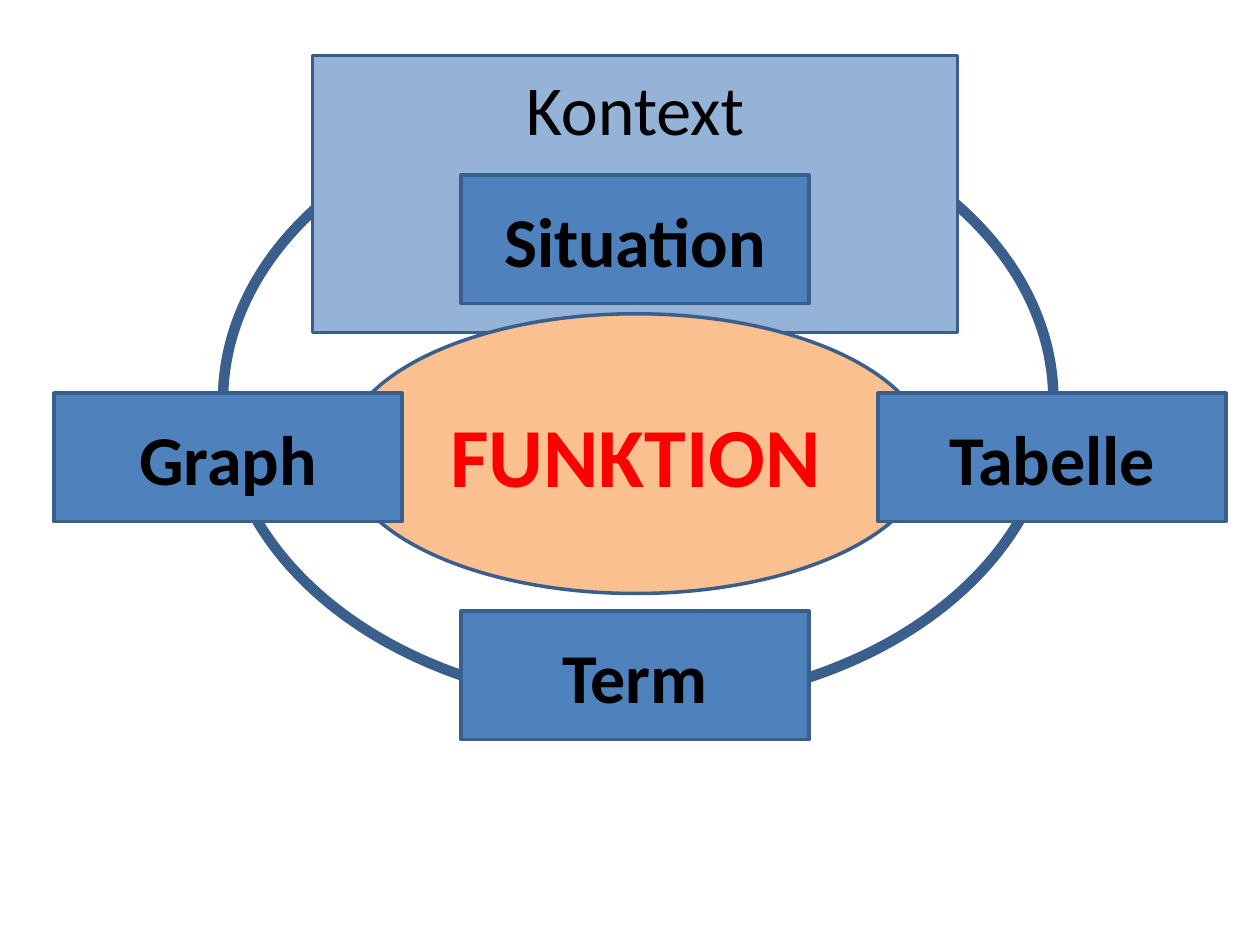
from pptx import Presentation
from pptx.dml.color import RGBColor
from pptx.enum.shapes import MSO_SHAPE
from pptx.enum.text import MSO_ANCHOR, PP_ALIGN
from pptx.util import Inches, Pt

COLORS = {
    "line": "3A5F8C",
    "context": "95B3D7",
    "box": "4F81BD",
    "center": "FAC090",
    "text": "000000",
    "accent": "FF0000",
}
FONT = "Calibri"

RING = (1.77, 0.76, 6.59, 4.83)
CONTEXT = ("Kontext", (2.48, 0.44, 5.12, 2.2))
CENTER = ("FUNKTION", (2.72, 2.49, 4.65, 2.22))

BOX_W, BOX_H = 2.76, 1.02
MID_X, MID_Y = 3.66, 3.12
TOP_BOX = ("Situation", MID_X, 1.39)
OUTER_BOXES = [
    ("Term", MID_X, 4.85),
    ("Graph", 0.43, MID_Y),
    ("Tabelle", 6.97, MID_Y),
]


def rgb(name):
    return RGBColor.from_string(COLORS[name])


def add_text(sp, text, size=40, bold=True, color="text", anchor=MSO_ANCHOR.MIDDLE):
    tf = sp.text_frame
    tf.word_wrap = True
    tf.vertical_anchor = anchor
    p = tf.paragraphs[0]
    p.alignment = PP_ALIGN.CENTER
    r = p.add_run()
    r.text = text
    r.font.name = FONT
    r.font.size = Pt(size)
    r.font.bold = bold
    r.font.color.rgb = rgb(color)


def add_outlined(slide, kind, at, fill=None, width=2):
    sp = slide.shapes.add_shape(kind, *(Inches(v) for v in at))
    sp.shadow.inherit = False
    if fill:
        sp.fill.solid()
        sp.fill.fore_color.rgb = rgb(fill)
    else:
        sp.fill.background()
    sp.line.color.rgb = rgb("line")
    sp.line.width = Pt(width)
    return sp


def add_box(slide, text, x, y):
    sp = add_outlined(slide, MSO_SHAPE.RECTANGLE, (x, y, BOX_W, BOX_H), "box")
    add_text(sp, text)


def main():
    prs = Presentation()
    prs.slide_width, prs.slide_height = Inches(10), Inches(7.5)
    slide = prs.slides.add_slide(prs.slide_layouts[6])

    add_outlined(slide, MSO_SHAPE.OVAL, RING, width=6)

    text, at = CONTEXT
    sp = add_outlined(slide, MSO_SHAPE.RECTANGLE, at, "context")
    add_text(sp, text, bold=False, anchor=MSO_ANCHOR.TOP)
    sp.text_frame.margin_top = Inches(0.08)

    add_box(slide, *TOP_BOX)

    text, at = CENTER
    sp = add_outlined(slide, MSO_SHAPE.OVAL, at, "center")
    add_text(sp, text, size=48, color="accent")

    for box in OUTER_BOXES:
        add_box(slide, *box)

    prs.save("out.pptx")


if __name__ == "__main__":
    main()
